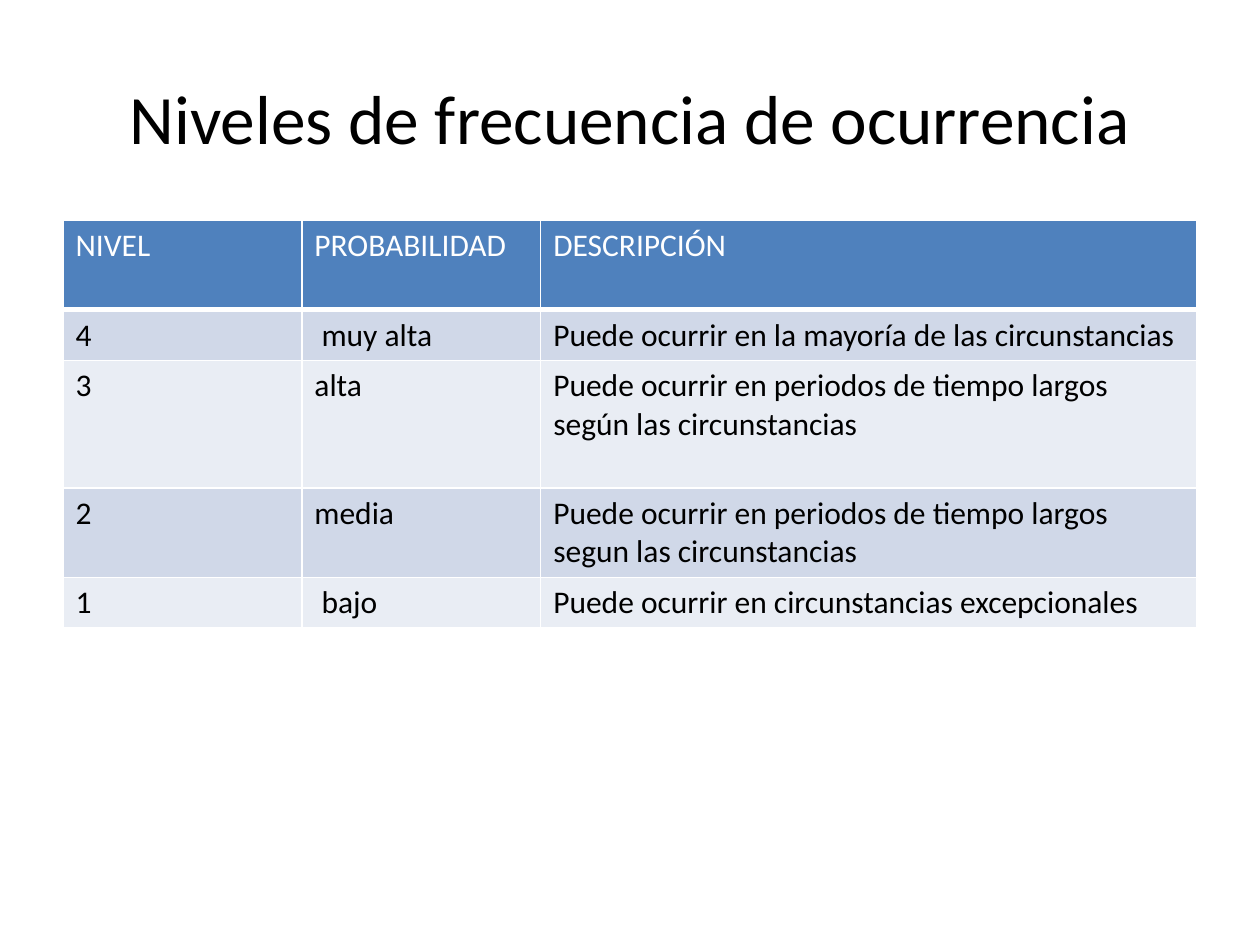
from dataclasses import dataclass
from pptx import Presentation
from pptx.dml.color import RGBColor as Rgb
from pptx.enum.text import MSO_ANCHOR as Anchor, PP_ALIGN as Align
from pptx.oxml.ns import qn
from pptx.util import Pt
from lxml.etree import SubElement as Sub


@dataclass(frozen=True)
class Theme:
    font: str = "Calibri"
    black: str = "000000"
    white: str = "FFFFFF"
    head: str = "4F81BD"
    bands: tuple = ("D0D8E8", "E9EDF4")
    title: float = 39.6
    body: float = 18
    thin: float = 1
    thick: float = 3


THEME = Theme()
LEFT, WIDTH = 36, 648
COLS = (136.5, 136.5, 375)
HEIGHTS = (51, 29, 73, 51, 29)
ROWS = (
    ("NIVEL", "PROBABILIDAD", "DESCRIPCIÓN"),
    ("4", " muy alta", "Puede ocurrir en la mayoría de las circunstancias"),
    ("3", "alta", "Puede ocurrir en periodos de tiempo largos según las circunstancias"),
    ("2", "media", "Puede ocurrir en periodos de tiempo largos segun las circunstancias"),
    ("1", " bajo", "Puede ocurrir en circunstancias excepcionales"),
)


def add_run(para, text, size, color):
    run = para.add_run()
    run.text = text
    run.font.name = THEME.font
    run.font.size = Pt(size)
    run.font.color.rgb = Rgb.from_string(color)


def add_title(slide, text):
    box = slide.shapes.add_textbox(Pt(LEFT), Pt(21.6), Pt(WIDTH), Pt(90))
    frame = box.text_frame
    frame.word_wrap = True
    frame.vertical_anchor = Anchor.MIDDLE
    para = frame.paragraphs[0]
    para.alignment = Align.CENTER
    add_run(para, text, THEME.title, THEME.black)


def add_edges(cell, top, bottom):
    props = cell._tc.get_or_add_tcPr()
    widths = {"L": THEME.thin, "R": THEME.thin, "T": top, "B": bottom}
    for side, width in widths.items():
        line = Sub(props, qn(f"a:ln{side}"), w=str(Pt(width)))
        fill = Sub(line, qn("a:solidFill"))
        Sub(fill, qn("a:srgbClr"), val=THEME.white)


def fill_cell(cell, text, row):
    top = THEME.thick if row == 1 else THEME.thin
    bottom = THEME.thick if row == 0 else THEME.thin
    add_edges(cell, top, bottom)
    back = THEME.bands[(row - 1) % 2] if row else THEME.head
    cell.fill.solid()
    cell.fill.fore_color.rgb = Rgb.from_string(back)
    ink = THEME.black if row else THEME.white
    add_run(cell.text_frame.paragraphs[0], text, THEME.body, ink)


def add_grid(slide):
    frame = slide.shapes.add_table(
        len(ROWS), len(COLS), Pt(LEFT), Pt(126), Pt(WIDTH), Pt(sum(HEIGHTS)))
    table = frame.table
    for col, width in zip(table.columns, COLS):
        col.width = Pt(width)
    for row, (height, texts) in enumerate(zip(HEIGHTS, ROWS)):
        table.rows[row].height = Pt(height)
        for col, text in enumerate(texts):
            fill_cell(table.cell(row, col), text, row)


def main():
    deck = Presentation()
    deck.slide_width, deck.slide_height = Pt(720), Pt(540)
    slide = deck.slides.add_slide(deck.slide_layouts[6])
    add_title(slide, "Niveles de frecuencia de ocurrencia")
    add_grid(slide)
    deck.save("out.pptx")


if __name__ == "__main__":
    main()
